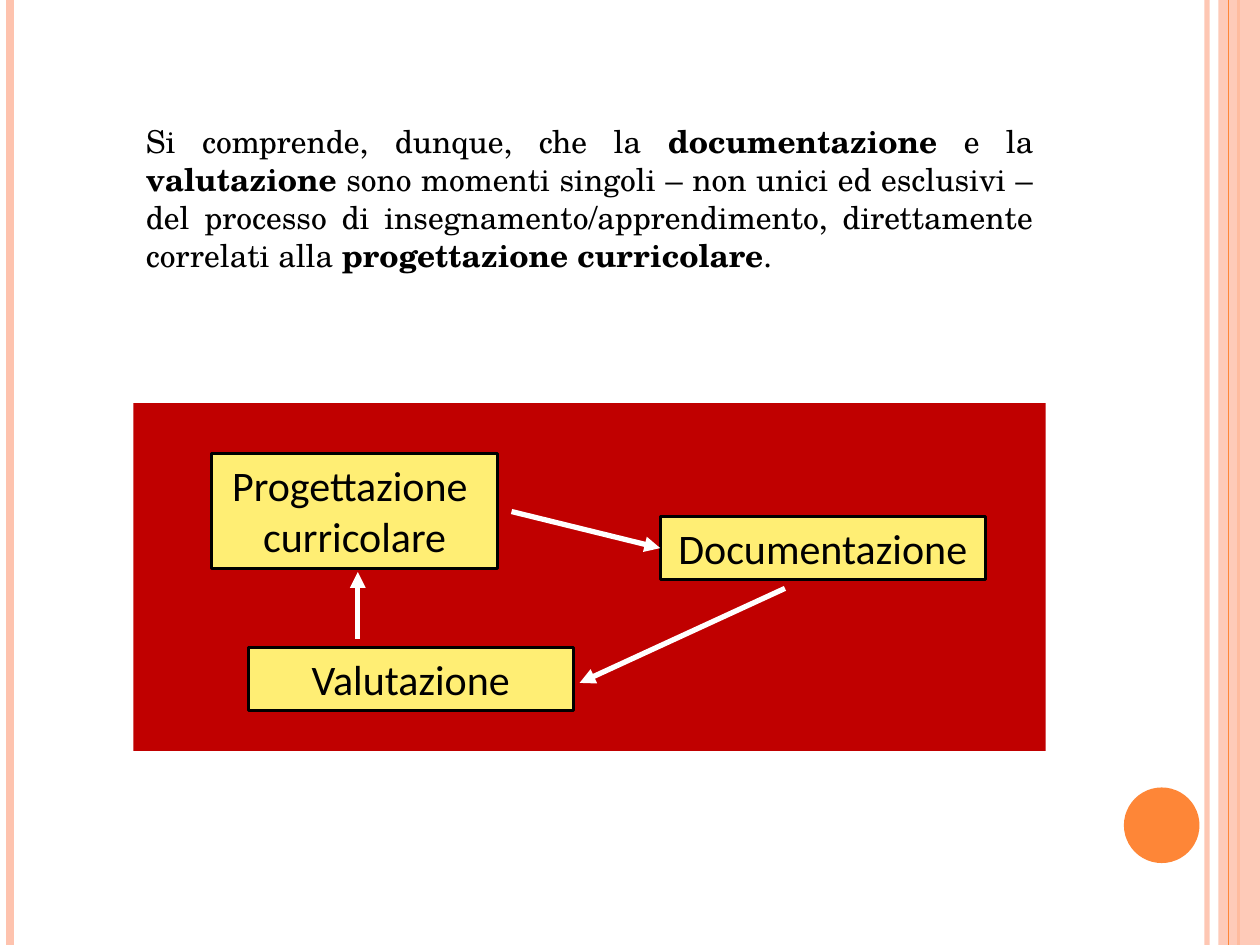
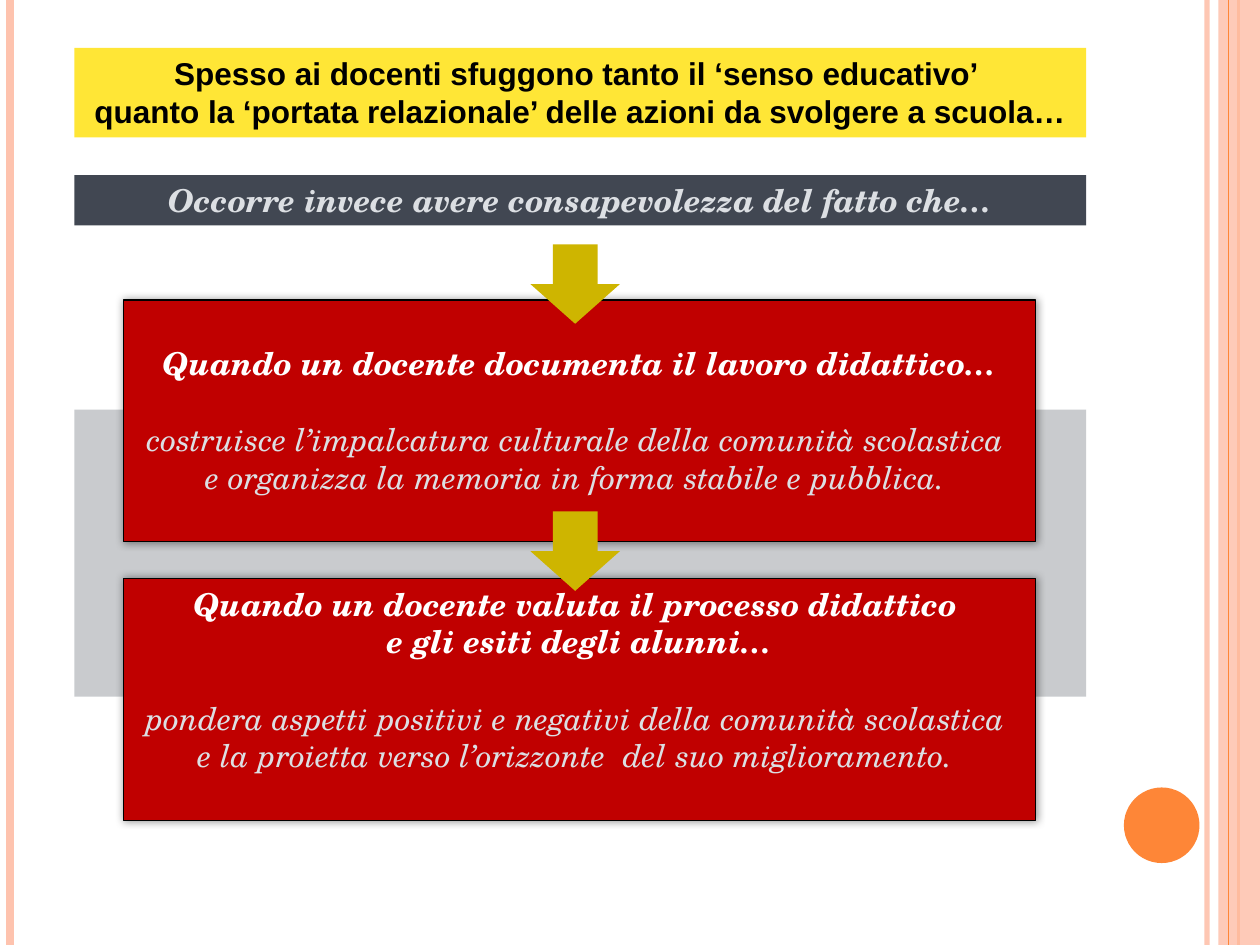
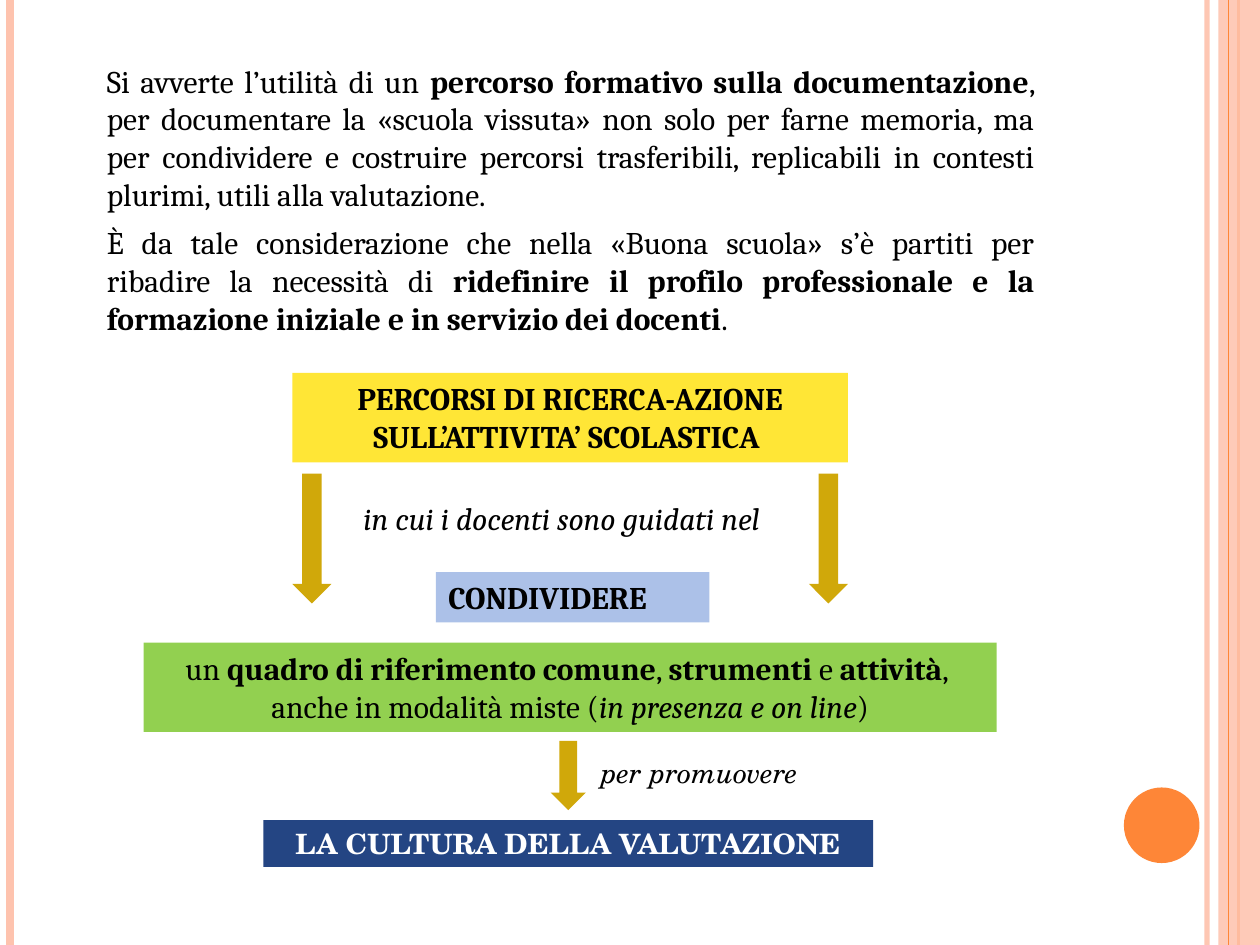
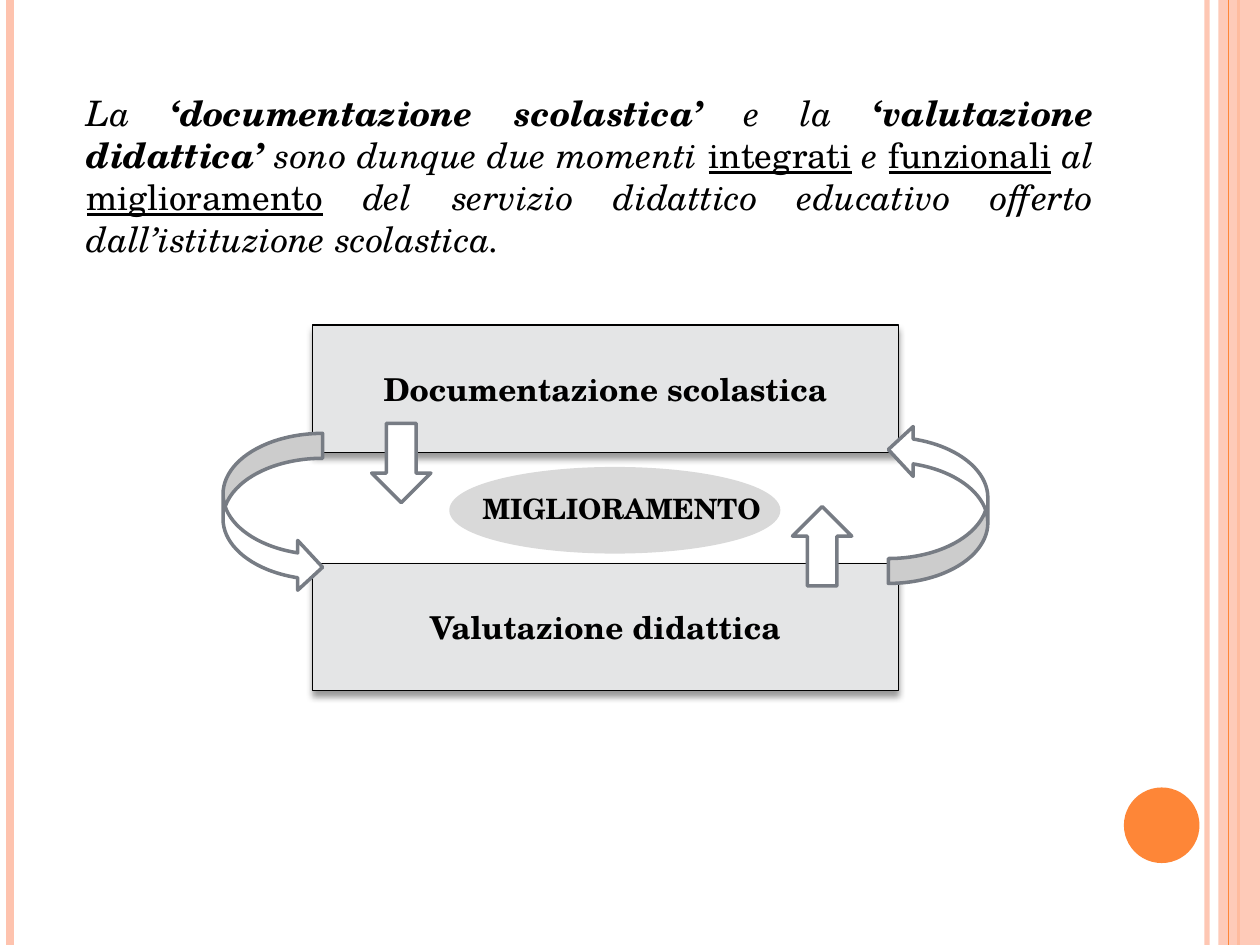
import dataclasses

import pptx
import pptx.dml.color
import pptx.enum.shapes
import pptx.enum.text
import pptx.oxml
import pptx.oxml.ns
import pptx.util

Inches = pptx.util.Inches
Pt = pptx.util.Pt
SHAPE = pptx.enum.shapes.MSO_SHAPE
ALIGN = pptx.enum.text.PP_ALIGN
ANCHOR = pptx.enum.text.MSO_ANCHOR
qn = pptx.oxml.ns.qn


@dataclasses.dataclass(frozen=True)
class Theme:
    serif: str = "TeX Gyre Schola"
    book: str = "Cambria"
    sans: str = "Calibri"
    plain: str = "Arial"
    small: int = 16
    body: int = 18
    lead: int = 20
    node: int = 24
    blank_line: int = 22
    black: str = "000000"
    white: str = "FFFFFF"
    peach: str = "FEC3AE"
    orange: str = "FE8637"
    red: str = "C00000"
    cream: str = "FFEE74"
    yellow: str = "FFE636"
    slate: str = "414752"
    mist: str = "DCDFE3"
    backdrop: str = "C9CBCE"
    olive: str = "CEB500"
    gold: str = "D0A80A"
    sky: str = "ACC1E8"
    green: str = "92D050"
    navy: str = "244583"
    panel: str = "E4E5E6"
    oval: str = "D9D9D9"
    outline: str = "777C84"


T = Theme()


def rgb(color):
    return pptx.dml.color.RGBColor.from_string(color)


def inside(area, dx, dy, w, h):
    return area[0] + dx, area[1] + dy, w, h


def set_alpha(element, percent):
    clr = next(element.iter(qn("a:srgbClr")))
    alpha = pptx.oxml.parse_xml(
        f'<a:alpha {pptx.oxml.ns.nsdecls("a")} val="{percent * 1000}"/>')
    clr.append(alpha)


def add_shadow(sp, blur, dist, angle):
    effects = sp.element.spPr.find(qn("a:effectLst"))
    effects.append(pptx.oxml.parse_xml(
        f'<a:outerShdw {pptx.oxml.ns.nsdecls("a")} blurRad="{Pt(blur)}" '
        f'dist="{Pt(dist)}" dir="{angle * 60000}" rotWithShape="0">'
        f'<a:srgbClr val="{T.black}"><a:alpha val="40000"/></a:srgbClr>'
        '</a:outerShdw>'))


def shape(shapes, kind, box, fill, line=None, width=0.75, rotation=0):
    sp = shapes.add_shape(kind, *map(Inches, box))
    sp.shadow.inherit = False
    sp.fill.solid()
    sp.fill.fore_color.rgb = rgb(fill)
    if line:
        sp.line.color.rgb = rgb(line)
        sp.line.width = Pt(width)
    else:
        sp.line.fill.background()
    sp.rotation = rotation
    return sp


def line(shapes, start, end, color, width, alpha=None, arrow=False):
    cx = shapes.add_connector(pptx.enum.shapes.MSO_CONNECTOR.STRAIGHT,
                              *map(Inches, start + end))
    cx.line.color.rgb = rgb(color)
    cx.line.width = Pt(width)
    spPr = cx._element.spPr
    if alpha:
        set_alpha(spPr, alpha)
    ns = pptx.oxml.ns.nsdecls("a")
    if arrow:
        cx.line._get_or_add_ln().append(
            pptx.oxml.parse_xml(f'<a:tailEnd {ns} type="triangle"/>'))
    spPr.append(pptx.oxml.parse_xml(f'<a:effectLst {ns}/>'))
    return cx


def write(sp, paragraphs, size=T.body, font=T.serif, color=T.black,
          align=ALIGN.CENTER, anchor=ANCHOR.TOP, before=0):
    tf = sp.text_frame
    tf.word_wrap = True
    tf.vertical_anchor = anchor
    for i, runs in enumerate(paragraphs):
        p = tf.paragraphs[0] if i == 0 else tf.add_paragraph()
        p.alignment = align
        p.space_before = Pt(before)
        for text, style in runs:
            r = p.add_run()
            r.text = text
            r.font.size = Pt(size)
            r.font.name = font
            r.font.color.rgb = rgb(color)
            r.font.bold = "b" in style
            r.font.italic = "i" in style
            r.font.underline = "u" in style
    return sp


def text(shapes, box, paragraphs, **style):
    return write(shapes.add_textbox(*map(Inches, box)), paragraphs, **style)


def bar(shapes, box, fill, paragraphs, **style):
    return write(shape(shapes, SHAPE.RECTANGLE, box, fill), paragraphs, **style)


def frame(s, width, height):
    def rule(x, color, weight, alpha=None):
        line(s.shapes, (x, 0), (x, height), color, weight, alpha)

    rule(width - 0.42, T.peach, 3, 93)
    rule(0.08, T.peach, 4.5)
    rule(width - 0.17, T.orange, 1.5)
    band = shape(s.shapes, SHAPE.RECTANGLE, (width - 0.33, 0, 0.33, height), T.peach)
    set_alpha(band.element.spPr, 87)
    rule(width - 0.25, T.orange, 0.75)
    shape(s.shapes, SHAPE.OVAL, (width - 1.08, height - 1.25, 0.6, 0.6), T.orange)


def curriculum_cycle(s, area):
    shapes = s.shapes.add_group_shape().shapes
    shape(shapes, SHAPE.RECTANGLE, area, T.red)

    def node(dx, dy, w, h, *lines):
        sp = shape(shapes, SHAPE.RECTANGLE, inside(area, dx, dy, w, h),
                   T.cream, T.black, 1.5)
        return write(sp, [[(t, "")] for t in lines], size=T.node, font=T.sans)

    node(0.62, 0.4, 2.27, 0.91, "Progettazione ", "curricolare")
    documentation = node(4.18, 0.9, 2.58, 0.5, "Documentazione")
    node(0.91, 1.94, 2.58, 0.5, "Valutazione")

    def arrow(start, end):
        return line(shapes, inside(area, *start, 0, 0)[:2],
                    inside(area, *end, 0, 0)[:2], T.white, 3, arrow=True)

    arrow((3, 0.86), (4.18, 1.15)).end_connect(documentation, 1)
    arrow((5.17, 1.47), (3.54, 2.22))
    arrow((1.78, 1.87), (1.78, 1.34))


def cycle_slide(s):
    curriculum_cycle(s, (1.06, 3.2, 7.24, 2.76))
    text(s.shapes, (1.06, 0.92, 7.24, 1.31), [[
        ("Si comprende, dunque, che la ", ""), ("documentazione", "b"),
        (" e la ", ""), ("valutazione", "b"),
        (" sono momenti singoli – non unici ed esclusivi – del processo di "
         "insegnamento/apprendimento, direttamente correlati alla ", ""),
        ("progettazione curricolare", "b"), (".", "")]], align=ALIGN.JUSTIFY)


def teacher_cards(s, area):
    shapes = s.shapes.add_group_shape().shapes
    shape(shapes, SHAPE.RECTANGLE, inside(area, 0, 0.87, area[2], 2.28), T.backdrop)
    cards = [
        (0.35, ["Quando un docente documenta il lavoro didattico…"],
         ["costruisce l’impalcatura culturale della comunità scolastica ",
          "e organizza la memoria in forma stabile e pubblica. "]),
        (0.05, ["Quando un docente valuta il processo didattico ",
                "e gli esiti degli alunni…"],
         ["pondera aspetti positivi e negativi della comunità scolastica ",
          "e la proietta verso l’orizzonte  del suo miglioramento. "]),
    ]
    for i, (top, heading, detail) in enumerate(cards):
        sp = shape(shapes, SHAPE.RECTANGLE,
                   inside(area, 0.39, 2.21 * i, 7.24, 1.92), T.red, T.black)
        add_shadow(sp, 5, 0, 0)
        write(sp, [[(t, "bi")] for t in heading] + [[(t, "i")] for t in detail],
              color=T.white)
        sp.text_frame.margin_top = Inches(top)
        body = sp.text_frame.paragraphs[len(heading):]
        body[0].space_before = Pt(T.blank_line)
        for p in body:
            p.runs[0].font.color.rgb = rgb(T.mist)


def awareness_slide(s):
    x, w = 0.59, 8.03
    teacher_cards(s, (x, 2.38, w, 4.13))
    bar(s.shapes, (x, 0.38, w, 0.71), T.yellow, [
        [("Spesso ai docenti sfuggono tanto il ‘senso educativo’ ", "b")],
        [("quanto la ‘portata relazionale’ delle azioni da svolgere a scuola…", "b")],
    ], font=T.plain)
    bar(s.shapes, (x, 1.39, w, 0.4), T.slate,
        [[("Occorre invece avere consapevolezza del fatto che…", "bi")]], color=T.mist)
    for y in (1.94, 4.06):
        shape(s.shapes, SHAPE.DOWN_ARROW, (4.21, y, 0.71, 0.63), T.olive)


def research_flow(s, area):
    shapes = s.shapes.add_group_shape().shapes
    text(shapes, inside(area, 1.18, 0.95, 4.33, 0.4),
         [[("in cui i docenti sono guidati nel ", "i")]], font=T.book, before=7)
    bar(shapes, inside(area, 1.18, 0, 4.41, 0.71), T.yellow, [
        [("PERCORSI DI RICERCA-AZIONE", "b")],
        [("SULL’ATTIVITA’ SCOLASTICA ", "b")]], font=T.book)
    bar(shapes, inside(area, 2.32, 1.58, 2.17, 0.4), T.sky,
        [[("CONDIVIDERE", "b")]], font=T.book, align=ALIGN.LEFT)
    bar(shapes, inside(area, 0, 2.14, area[2], 0.71), T.green, [
        [("un ", ""), ("quadro di riferimento comune", "b"), (", ", ""),
         ("strumenti", "b"), (" e ", ""), ("attività", "b"), (", ", "")],
        [("anche in modalità miste (", ""), ("in presenza e on line", "i"),
         (")", "")]], font=T.book)
    for dx, dy, w, h in ((1.18, 0.8, 0.31, 1.03), (5.28, 0.8, 0.31, 1.03),
                         (3.23, 2.92, 0.28, 0.55)):
        shape(shapes, SHAPE.DOWN_ARROW, inside(area, dx, dy, w, h), T.gold)
    bar(shapes, inside(area, 0.95, 3.55, 4.84, 0.37), T.navy,
        [[("LA CULTURA DELLA VALUTAZIONE", "b")]], size=T.small, color=T.white)
    text(shapes, inside(area, 3.23, 2.99, 2.36, 0.37),
         [[("per promuovere", "i")]], size=T.small)


def training_slide(s):
    text(s.shapes, (0.75, 0.44, 7.56, 2.31), [
        [("Si avverte l’utilità di un ", ""),
         ("percorso formativo sulla documentazione", "b"),
         (", per documentare la «scuola vissuta» non solo per farne memoria, "
          "ma per condividere e costruire percorsi trasferibili, replicabili "
          "in contesti plurimi, utili alla valutazione.", "")],
        [("È da tale considerazione che nella «Buona scuola» s’è partiti per "
          "ribadire la necessità di ", ""),
         ("ridefinire il profilo professionale e la formazione iniziale e in "
          "servizio dei docenti", "b"), (".", "")],
    ], font=T.book, align=ALIGN.JUSTIFY, before=6)
    research_flow(s, (1.14, 2.96, 6.77, 3.92))


def improvement_loop(s, area):
    shapes = s.shapes.add_group_shape().shapes
    shape(shapes, SHAPE.OVAL, inside(area, 1.81, 1.14, 2.6, 0.66), T.oval, T.oval, 2)
    for dy, label in ((0, "Documentazione scolastica"), (1.89, "Valutazione didattica")):
        sp = shape(shapes, SHAPE.RECTANGLE, inside(area, 0.71, dy, 4.65, 1.01),
                   T.panel, T.black)
        add_shadow(sp, 4, 3, 90)
        write(sp, [[(label, "b")]], anchor=ANCHOR.MIDDLE)
    arrows = [
        (SHAPE.CURVED_RIGHT_ARROW, 0, 0.86, 0.79, 1.26, 0),
        (SHAPE.CURVED_RIGHT_ARROW, 5.28, 0.79, 0.79, 1.26, 180),
        (SHAPE.DOWN_ARROW, 1.18, 0.78, 0.47, 0.63, 0),
        (SHAPE.DOWN_ARROW, 4.52, 1.44, 0.47, 0.63, 180),
    ]
    for kind, dx, dy, w, h, turn in arrows:
        shape(shapes, kind, inside(area, dx, dy, w, h), T.white, T.outline, 2, turn)
    text(s.shapes, inside(area, 1.81, 1.27, 2.71, 0.37),
         [[("MIGLIORAMENTO", "b")]], size=T.small)


def improvement_slide(s):
    text(s.shapes, (0.59, 0.68, 8.19, 1.45), [[
        ("La ", "i"), ("‘documentazione scolastica’ ", "bi"), ("e la", "i"),
        (" ‘valutazione didattica’ ", "bi"), ("sono dunque due momenti ", "i"),
        ("integrati", "u"), (" e ", "i"), ("funzionali", "u"), (" al ", "i"),
        ("miglioramento", "u"),
        (" del servizio didattico educativo offerto dall’istituzione scolastica.", "i"),
    ]], size=T.lead, align=ALIGN.JUSTIFY)
    improvement_loop(s, (1.77, 2.58, 6.07, 2.9))


def main():
    width, height = 10, 7.5
    prs = pptx.Presentation()
    prs.slide_width, prs.slide_height = Inches(width), Inches(height)
    for build in (cycle_slide, awareness_slide, training_slide, improvement_slide):
        s = prs.slides.add_slide(prs.slide_layouts[6])
        frame(s, width, height)
        build(s)
    prs.save("out.pptx")


if __name__ == "__main__":
    main()
